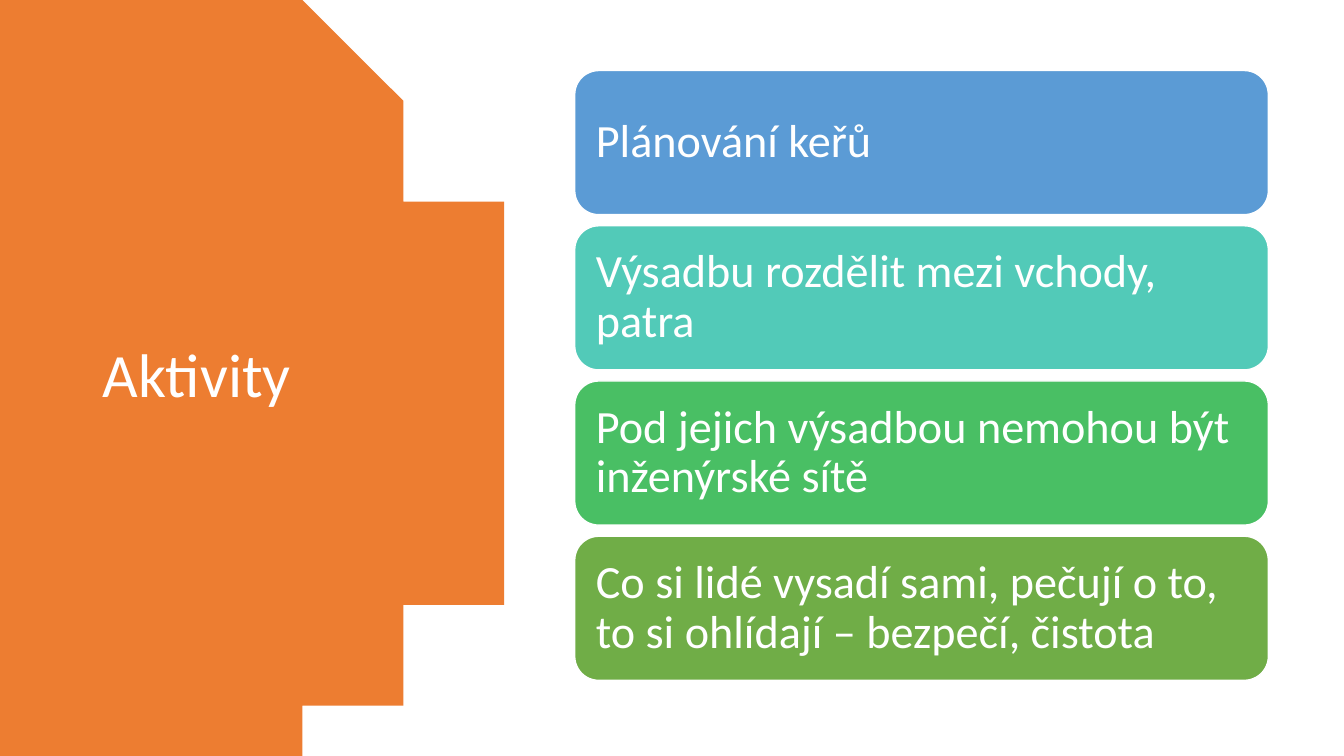
"""Build the "Aktivity" slide: a title on a round panel beside four activity cards."""
import dataclasses
import math

import pptx
import pptx.dml.color
import pptx.enum.shapes
import pptx.enum.text
import pptx.util

SLIDE_WIDTH, SLIDE_HEIGHT = 13.33, 7.5
PANEL_RIGHT, PANEL_RADIUS = 4.93, 4.4
ARC_STEPS = 120
TITLE_BOX = (0.92, 0.7, 3.23, 6.09)
CARD_LEFT, CARD_TOP, CARD_WIDTH, CARD_HEIGHT = 5.7, 0.7, 6.88, 1.43
CARD_PITCH = 1.54
CARD_INSET = 0.14
ACTIVITIES = (
    "Plánování keřů",
    "Výsadbu rozdělit mezi vchody, patra",
    "Pod jejich výsadbou nemohou být inženýrské sítě",
    "Co si lidé vysadí sami, pečují o to, to si ohlídají – bezpečí, čistota",
)


@dataclasses.dataclass(frozen=True)
class Theme:
    """Colours, font and type sizes of the slide."""
    font: str = "Calibri"
    light: str = "FFFFFF"
    panel: str = "ED7D31"
    cards: tuple = ("5B9BD5", "52CAB8", "49BF64", "70AD47")
    title_size: int = 44
    card_size: int = 33


THEME = Theme()


def color(value):
    """Return the RGB colour for a hexadecimal value."""
    return pptx.dml.color.RGBColor.from_string(value)


def inches(*lengths):
    """Convert lengths in inches to a list of slide units."""
    return [pptx.util.Inches(length) for length in lengths]


def write(frame, wording, size):
    """Set left-aligned, vertically centred light text in a frame."""
    frame.word_wrap = True
    frame.vertical_anchor = pptx.enum.text.MSO_ANCHOR.MIDDLE
    frame.text = wording
    paragraph = frame.paragraphs[0]
    paragraph.alignment = pptx.enum.text.PP_ALIGN.LEFT
    paragraph.line_spacing = 0.9
    font = paragraph.runs[0].font
    font.name = THEME.font
    font.size = pptx.util.Pt(size)
    font.color.rgb = color(THEME.light)


def add_panel(slide):
    """Draw the panel that ends in a circular arc on its right side."""
    middle = SLIDE_HEIGHT / 2
    center = PANEL_RIGHT - PANEL_RADIUS
    reach = math.asin(middle / PANEL_RADIUS)
    angles = [reach * (2 * step / ARC_STEPS - 1) for step in range(ARC_STEPS + 1)]
    arc = [(center + PANEL_RADIUS * math.cos(angle),
            middle + PANEL_RADIUS * math.sin(angle)) for angle in angles]
    outline = slide.shapes.build_freeform(0, 0, scale=pptx.util.Inches(1))
    outline.add_line_segments(arc + [(0, SLIDE_HEIGHT)], close=True)
    panel = outline.convert_to_shape()
    panel.shadow.inherit = False
    panel.fill.solid()
    panel.fill.fore_color.rgb = color(THEME.panel)
    panel.line.fill.background()


def add_title(slide, wording):
    """Place the title over the panel."""
    title = slide.shapes.add_textbox(*inches(*TITLE_BOX))
    write(title.text_frame, wording, THEME.title_size)


def add_card(slide, row, wording, fill):
    """Add the rounded activity card of one row."""
    card = slide.shapes.add_shape(
        pptx.enum.shapes.MSO_SHAPE.ROUNDED_RECTANGLE,
        *inches(CARD_LEFT, CARD_TOP + row * CARD_PITCH, CARD_WIDTH, CARD_HEIGHT))
    card.shadow.inherit = False
    card.fill.solid()
    card.fill.fore_color.rgb = color(fill)
    card.line.color.rgb = color(THEME.light)
    card.line.width = pptx.util.Pt(1)
    frame = card.text_frame
    (frame.margin_left, frame.margin_top,
     frame.margin_right, frame.margin_bottom) = inches(*[CARD_INSET] * 4)
    write(frame, wording, THEME.card_size)


def main():
    """Compose the slide and save it."""
    deck = pptx.Presentation()
    deck.slide_width, deck.slide_height = inches(SLIDE_WIDTH, SLIDE_HEIGHT)
    slide = deck.slides.add_slide(deck.slide_layouts[6])
    add_panel(slide)
    add_title(slide, "Aktivity")
    for row, (wording, fill) in enumerate(zip(ACTIVITIES, THEME.cards)):
        add_card(slide, row, wording, fill)
    deck.save("out.pptx")


if __name__ == "__main__":
    main()
